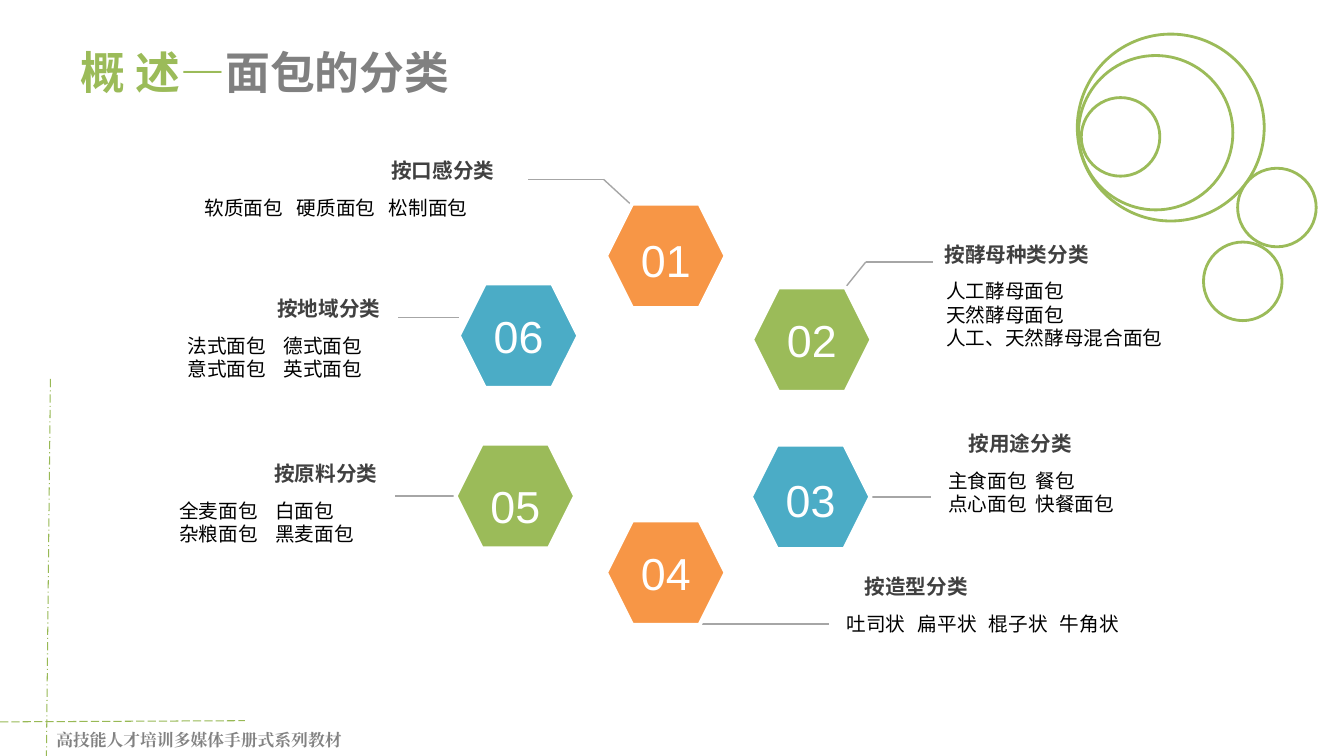
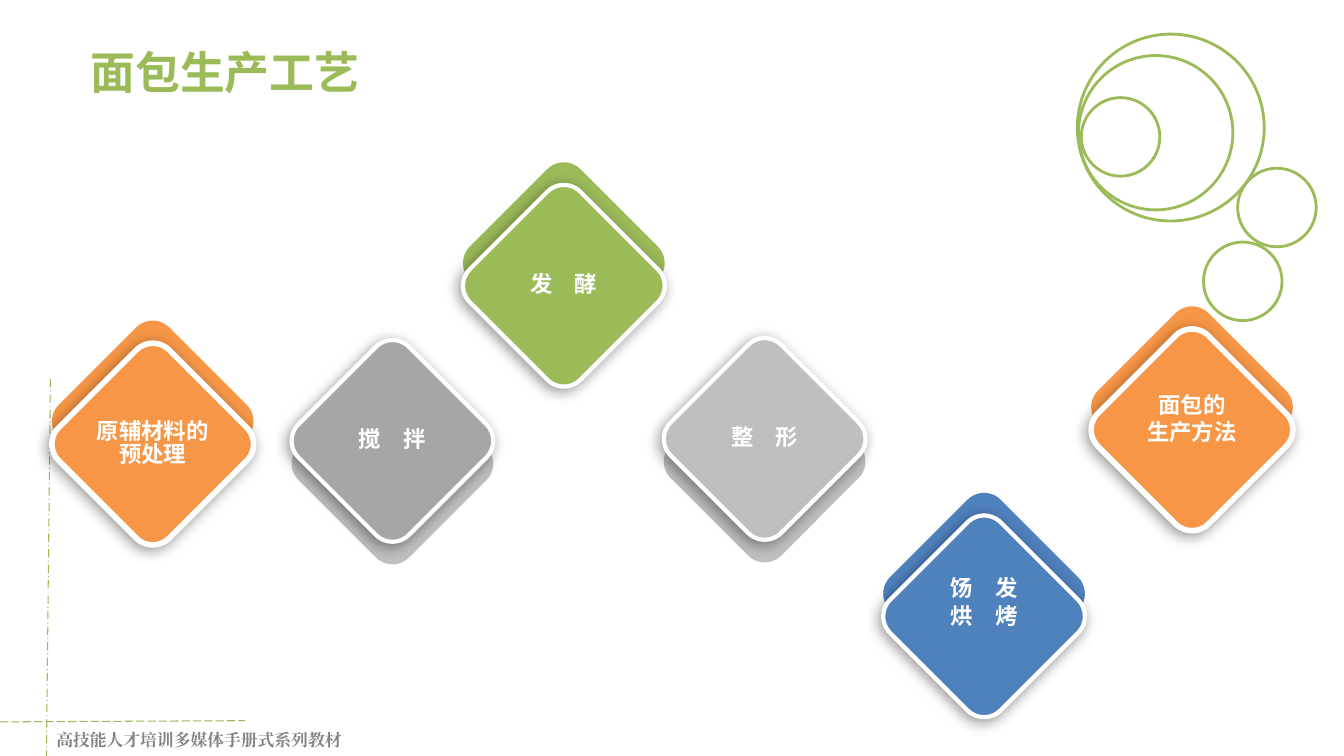
from dataclasses import dataclass

from lxml.etree import SubElement
from pptx import Presentation
from pptx.dml.color import RGBColor
from pptx.enum.dml import MSO_LINE as Dash
from pptx.enum.shapes import MSO_CONNECTOR as Conn, MSO_SHAPE as Kind
from pptx.enum.text import MSO_ANCHOR as Anchor, PP_ALIGN as Align
from pptx.oxml.ns import qn
from pptx.util import Cm, Pt


@dataclass(frozen=True)
class Theme:
    """Colours, fonts and type sizes of the deck."""
    green: str = "9BBB59"
    moss: str = "98B955"
    orange: str = "F79646"
    teal: str = "4BACC6"
    blue: str = "4F81BD"
    gray: str = "808080"
    foot: str = "828282"
    dark: str = "404040"
    mid: str = "A6A6A6"
    pale: str = "BFBFBF"
    white: str = "FFFFFF"
    black: str = "000000"
    sans: str = "Noto Sans CJK SC"
    serif: str = "Times New Roman"
    digit: str = "Arial"
    title: float = 32
    label: float = 16
    head: float = 14.7
    body: float = 14
    small: float = 12
    tight: float = 0.88


T = Theme()
HEX = (3.02, 2.64)
TILE = 3.94
STEP = 0.57


def put(obj, vals):
    """Set each attribute of an object from a dict."""
    for key, val in vals.items():
        setattr(obj, key, val)


def ink(name):
    """Turn a hex string into a colour."""
    return RGBColor.from_string(name)


def style(run, size, color, face=T.sans, bold=False):
    """Format one run, East Asian face included."""
    put(run.font, {"size": Pt(size), "bold": bold, "name": face})
    run.font.color.rgb = ink(color)
    SubElement(run._r.get_or_add_rPr(), qn("a:ea"), typeface=face)


def tabs(para, step, count):
    """Give a paragraph evenly spaced tab stops."""
    stops = SubElement(para._p.get_or_add_pPr(), qn("a:tabLst"))
    for num in range(1, count + 1):
        SubElement(stops, qn("a:tab"), pos=str(Cm(step * num)), algn="l")


def write(frame, lines, look, para=None, step=0, **vals):
    """Fill a frame, each line being a list of (text, colour) runs."""
    put(frame, vals)
    for num, line in enumerate(lines):
        par = frame.paragraphs[0] if num == 0 else frame.add_paragraph()
        put(par, para or {})
        if step:
            tabs(par, step, 3)
        for text, color in line:
            run = par.add_run()
            run.text = text
            style(run, color=color, **look)


def text(slide, box, lines, look, **opts):
    """Add a text box."""
    frame = slide.shapes.add_textbox(*map(Cm, box)).text_frame
    write(frame, lines, look, **opts)


def shape(slide, kind, box, fill=None, line=None, width=0):
    """Add a preset shape with plain fill and outline."""
    item = slide.shapes.add_shape(kind, *map(Cm, box))
    item.shadow.inherit = False
    for part, color in ((item.fill, fill), (item.line.fill, line)):
        if color:
            part.solid()
            part.fore_color.rgb = ink(color)
        else:
            part.background()
    if line:
        item.line.width = Pt(width)
    return item


def rule(slide, start, end, color, width, dash=None):
    """Draw one straight line."""
    item = slide.shapes.add_connector(Conn.STRAIGHT, *map(Cm, start + end))
    item.line.color.rgb = ink(color)
    put(item.line, {"width": Pt(width), "dash_style": dash})
    SubElement(item._element.spPr, qn("a:effectLst"))


def shade(item):
    """Cast a soft shadow to the lower left."""
    fx = item._element.spPr.find(qn("a:effectLst"))
    cast = SubElement(fx, qn("a:outerShdw"), blurRad=str(Pt(10)), dist=str(Pt(3)),
                      dir=str(135 * 60000), algn="tr", rotWithShape="0")
    color = SubElement(cast, qn("a:srgbClr"), val=T.black)
    SubElement(color, qn("a:alpha"), val="40000")


def frame(deck, left, title):
    """Start a slide with its title, rings and footer."""
    slide = deck.slides.add_slide(deck.slide_layouts[6])
    rule(slide, (1.27, 9.55), (1.17, 19.05), T.moss, 0.75, Dash.LONG_DASH_DOT)
    rule(slide, (0, 18.19), (6.17, 18.16), T.moss, 0.75, Dash.LONG_DASH)
    text(slide, (1.17, 18.26, 7.77, 0.76), [[("高技能人才培训多媒体手册式系列教材", T.foot)]],
         {"size": T.small, "face": T.serif, "bold": True}, word_wrap=False)
    for x, y, size in ((27.15, 0.86, 4.71), (27.18, 1.4, 3.89), (27.25, 2.46, 1.98),
                       (31.19, 4.24, 1.98), (30.33, 6.1, 1.98)):
        shape(slide, Kind.OVAL, (x, y, size, size), line=T.green, width=2)
    text(slide, (left, 1.17, 10.06, 1.63), [title], {"size": T.title, "bold": True},
         para={"line_spacing": T.tight}, word_wrap=False)
    return slide


def topic(slide, box, num, color, drop, lead, note, head, width, shift, step, lines):
    """Place a numbered hexagon with its leader, heading and list."""
    x, y = box
    path = [(x + dx, y + dy) for dx, dy in lead]
    for start, end in zip(path, path[1:]):
        rule(slide, start, end, T.mid, 1)
    item = shape(slide, Kind.HEXAGON, (x, y, *HEX), color, T.white, 3)
    write(item.text_frame, [[(num, T.white)]], {"size": T.title, "face": T.digit},
          para={"alignment": Align.CENTER}, word_wrap=False,
          vertical_anchor=Anchor.MIDDLE, margin_top=Cm(2 * drop), margin_bottom=0)
    left, top = x + note[0], y + note[1]
    pads = {"margin_left": Cm(0.23), "margin_right": Cm(0.23)}
    text(slide, (left, top, 0.48 + 0.52 * len(head), 0.86), [[(head, T.dark)]],
         {"size": T.head, "bold": True}, para={"line_spacing": T.tight},
         word_wrap=False, **pads)
    text(slide, (left + shift, top + 0.94, width, 0.13 + 0.71 * len(lines)),
         [[(line, T.black)] for line in lines], {"size": T.body}, step=step,
         para={"line_spacing": T.tight, "space_before": Pt(2)}, word_wrap=True, **pads)


def tile(slide, box, lines, front, back, width=3, up=True, lift=0):
    """Place a double diamond with a label at its centre."""
    x, y = box
    for top, color, line in ((y - STEP if up else y + STEP, back, None),
                             (y, front, T.white)):
        item = shape(slide, Kind.ROUNDED_RECTANGLE, (x, top, TILE, TILE),
                     color, line, width)
        item.adjustments[0] = 0.15
        item.rotation = 315 if up else 135
    shade(item)
    text(slide, (x + 0.29, y + TILE / 2 - 0.75 - lift, 3.36, 1.5),
         [[(line, T.white)] for line in lines], {"size": T.label, "bold": True},
         para={"alignment": Align.CENTER, "line_spacing": T.tight, "space_before": Pt(3)},
         word_wrap=True, vertical_anchor=Anchor.MIDDLE,
         margin_left=Cm(0.2), margin_right=Cm(0.2))


def kinds(deck):
    """Build the slide on the kinds of bread."""
    slide = frame(deck, 1.78, [("概 述—", T.green), ("面包的分类", T.gray)])
    for row in (
        ((15.27, 5.13), "01", T.orange, 0.1, [(0.66, 0.05), (-0.06, -0.61), (-1.96, -0.61)],
         (-5.64, -1.19), "按口感分类", 8.2, -4.7, 2.32, ["软质面包\t硬质面包\t松制面包"]),
        ((18.95, 7.24), "02", T.green, 0, [(2.34, 0.02), (2.87, -0.64), (4.57, -0.64)],
         (4.62, -1.19), "按酵母种类分类", 6.8, 0.05, 0,
         ["人工酵母面包", "天然酵母面包", "人工、天然酵母混合面包"]),
        ((18.92, 11.2), "03", T.teal, 0.08, [(3.03, 1.32), (4.55, 1.32)],
         (5.26, -0.38), "按用途分类", 6.8, -0.51, 2.2, ["主食面包\t餐包", "点心面包\t快餐面包"]),
        ((15.27, 13.11), "04", T.orange, 0, [(2.36, 2.61), (5.61, 2.61)],
         (6.29, 1.32), "按造型分类", 8.2, -0.45, 1.79, ["吐司状\t扁平状\t棍子状\t牛角状"]),
        ((11.48, 11.18), "05", T.green, 0.25, [(0, 1.32), (-1.52, 1.32)],
         (-4.8, 0.4), "按原料分类", 5.2, -2.39, 2.42, ["全麦面包\t白面包", "杂粮面包\t黑麦面包"]),
        ((11.56, 7.14), "06", T.teal, 0, [(0, 0.86), (-1.52, 0.86)],
         (-4.8, 0.28), "按地域分类", 5.2, -2.26, 2.42, ["法式面包\t德式面包", "意式面包\t英式面包"]),
    ):
        topic(slide, *row)


def steps(deck):
    """Build the slide on the steps of production."""
    slide = frame(deck, 2.03, [("面包生产工艺", T.green)])
    for row in (
        ((12.24, 5.23), ["发　酵"], T.green, T.green),
        ((7.92, 9.14), ["搅　拌"], T.mid, T.pale, 3, False),
        ((1.88, 9.22), ["原辅材料的预处理"], T.orange, T.orange, 4),
        ((17.3, 9.09), ["整　形"], T.pale, T.pale, 3, False),
        ((22.83, 13.56), ["饧　发", "烘　烤"], T.blue, T.blue, 3, True, 0.33),
        ((28.07, 8.86), ["面包的", "生产方法"], T.orange, T.orange, 4, True, 0.25),
    ):
        tile(slide, *row)


def main():
    """Build and save the deck."""
    deck = Presentation()
    put(deck, {"slide_width": Cm(33.87), "slide_height": Cm(19.05)})
    kinds(deck)
    steps(deck)
    deck.save("out.pptx")


if __name__ == "__main__":
    main()
